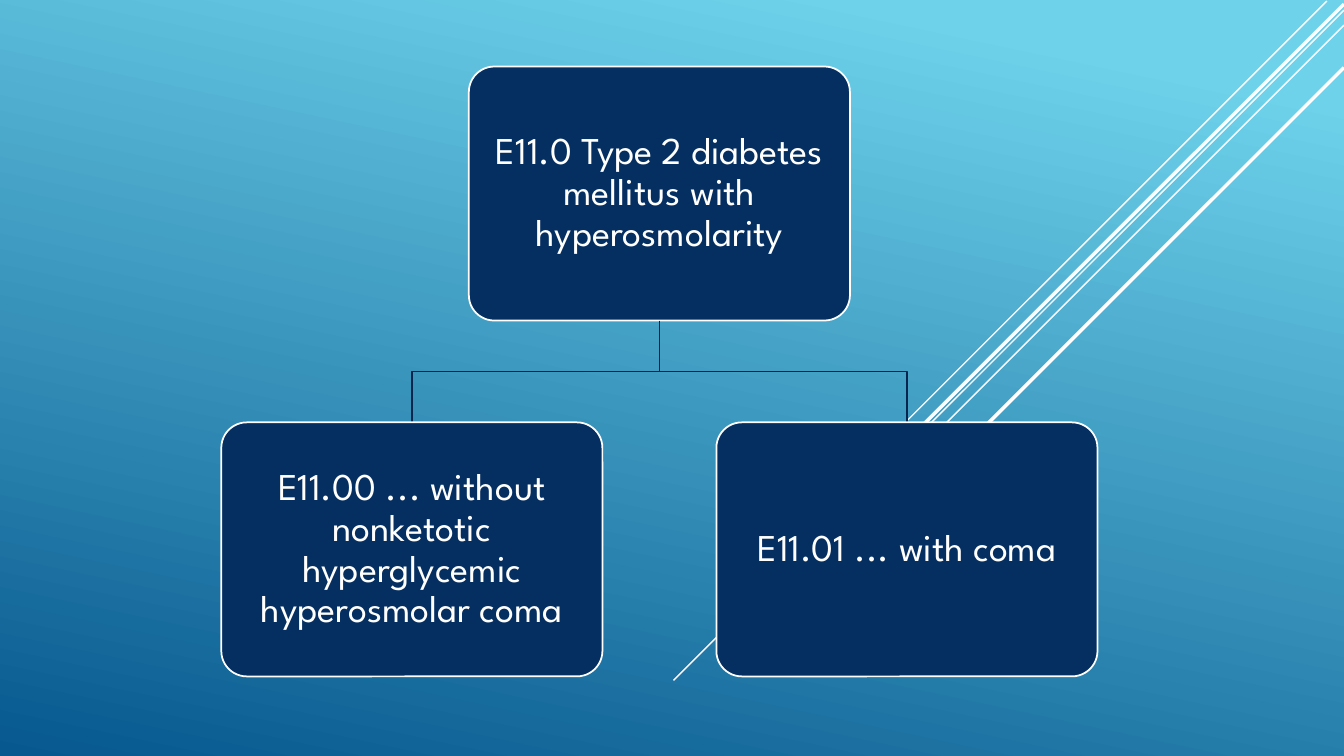
"""Builds a slide with a code tree for type 2 diabetes with hyperosmolarity."""
import pptx
import pptx.util
import pptx.dml.color
import pptx.enum.shapes
import pptx.enum.text
import pptx.oxml.ns
import lxml.etree

Inches = pptx.util.Inches
Pt = pptx.util.Pt
RGBColor = pptx.dml.color.RGBColor

SKY = RGBColor(0x6E, 0xD2, 0xEB)
SEA = RGBColor(0x06, 0x58, 0x8E)
NAVY = RGBColor(0x05, 0x2F, 0x61)
DARK = RGBColor(0x04, 0x26, 0x4E)
WHITE = RGBColor(0xFF, 0xFF, 0xFF)
FONT = "League Spartan"

WIDE, HIGH = 13.33, 7.5
BOX_W, BOX_H = 3.78, 2.52
MID = 6.54
STEP = 4.91
TOP = 0.66
DROP = 1.01
ROOT = "E11.0 Type 2 diabetes mellitus with hyperosmolarity"
CODES = [
    "E11.00 ... without nonketotic hyperglycemic hyperosmolar coma",
    "E11.01 ... with coma",
]
RAYS = [
    (13.16, 0.01, 4.16, 1),
    (WIDE, 0.1, 6.65, 1),
    (WIDE, 0.25, 5.42, 1),
    (WIDE, 0.04, 5.31, 2.5),
    (WIDE, 0.67, 4.75, 2.5),
]


def paint(slide):
    """Fill the background with the blue gradient."""
    fill = slide.background.fill
    fill.gradient()
    fill.gradient_angle = 360 - 102
    for stop, color, place in zip(fill.gradient_stops, (SKY, SEA), (0.1, 1)):
        stop.color.rgb = color
        stop.position = place


def add_ray(slide, left, top, run, width):
    """Draw a white diagonal that falls to the left by the given run."""
    ray = slide.shapes.add_connector(
        pptx.enum.shapes.MSO_CONNECTOR.STRAIGHT,
        Inches(left), Inches(top), Inches(left - run), Inches(top + run))
    ray.line.color.rgb = WHITE
    ray.line.width = Pt(width)
    lxml.etree.SubElement(
        ray._element.spPr, pptx.oxml.ns.qn("a:effectLst"))


def add_box(slide, center, top, text):
    """Add a rounded navy box with centred text."""
    box = slide.shapes.add_shape(
        pptx.enum.shapes.MSO_SHAPE.ROUNDED_RECTANGLE,
        Inches(center - BOX_W / 2), Inches(top), Inches(BOX_W), Inches(BOX_H))
    box.adjustments[0] = 0.1
    box.shadow.inherit = False
    box.fill.solid()
    box.fill.fore_color.rgb = NAVY
    box.line.color.rgb = WHITE
    box.line.width = Pt(1.25)
    frame = box.text_frame
    frame.word_wrap = True
    frame.vertical_anchor = pptx.enum.text.MSO_ANCHOR.MIDDLE
    frame.margin_left = frame.margin_right = Inches(0.14)
    frame.margin_top = frame.margin_bottom = Inches(0.14)
    para = frame.paragraphs[0]
    para.alignment = pptx.enum.text.PP_ALIGN.CENTER
    para.line_spacing = 0.9
    run = para.add_run()
    run.text = text
    run.font.name = FONT
    run.font.size = Pt(27)
    run.font.color.rgb = WHITE


def add_link(slide, center, top):
    """Draw the elbow from the root box to a child box."""
    half, end = top + DROP / 2, top + DROP
    pen = slide.shapes.build_freeform(Inches(MID), Inches(top))
    pen.add_line_segments(
        [(Inches(x), Inches(y))
         for x, y in ((MID, half), (center, half), (center, end))],
        close=False)
    link = pen.convert_to_shape()
    link.shadow.inherit = False
    link.fill.background()
    link.line.color.rgb = DARK
    link.line.width = Pt(1.25)


def main():
    """Build and save the slide."""
    deck = pptx.Presentation()
    deck.slide_width, deck.slide_height = Inches(WIDE), Inches(HIGH)
    slide = deck.slides.add_slide(deck.slide_layouts[6])
    paint(slide)
    for ray in RAYS:
        add_ray(slide, *ray)
    add_box(slide, MID, TOP, ROOT)
    base = TOP + BOX_H
    for index, code in enumerate(CODES):
        center = MID + (index - (len(CODES) - 1) / 2) * STEP
        add_link(slide, center, base)
        add_box(slide, center, base + DROP, code)
    deck.save("out.pptx")


if __name__ == "__main__":
    main()
